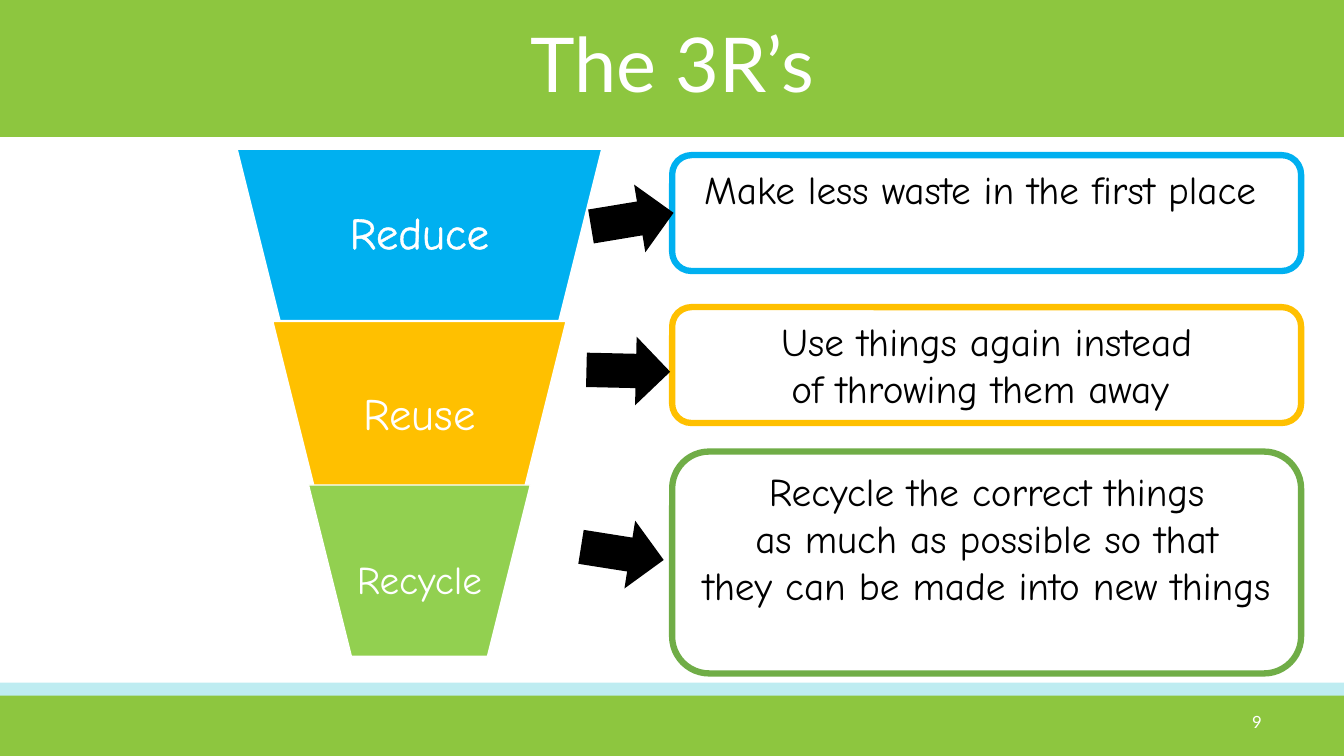
from dataclasses import dataclass

import lxml.etree
import pptx
import pptx.dml.color
import pptx.enum.shapes
import pptx.enum.text
import pptx.oxml
import pptx.util

Cm = pptx.util.Cm
Pt = pptx.util.Pt
SHAPE = pptx.enum.shapes.MSO_SHAPE
ALIGN = pptx.enum.text.PP_ALIGN
ANCHOR = pptx.enum.text.MSO_ANCHOR


@dataclass(frozen=True)
class Theme:
    white: str = "FFFFFF"
    black: str = "000000"
    band: str = "8DC63F"
    stripe: str = "BEECF1"
    blue: str = "00B0F0"
    amber: str = "FFC000"
    lime: str = "92D050"
    green: str = "70AD47"
    heading_font: str = "Lato"
    body_font: str = "Comic Neue"
    title_size: int = 54
    label_size: int = 32
    body_size: int = 28
    number_size: int = 12


THEME = Theme()
HARD_SPACE = chr(160)
SLIDE_WIDTH, SLIDE_HEIGHT = 33.87, 19.05
FUNNEL_CENTRE = 10.57
BOX_LEFT, BOX_WIDTH = 16.94, 15.85
ARROW_WIDTH, ARROW_HEIGHT = 2.11, 1.73

STAGES = [
    {
        "label": "Reduce", "size": THEME.label_size, "outlined": True,
        "fill": THEME.blue, "border": THEME.blue,
        "tier": (3.76, 9.19, 4.32), "label_area": (5.97, 4.32),
        "box": (3.91, 2.92), "arrow": (14.88, 4.67, 350.6),
        "text": "Make less waste in the first place ",
    },
    {
        "label": "Reuse", "size": THEME.label_size, "outlined": False,
        "fill": THEME.amber, "border": THEME.amber,
        "tier": (8.1, 7.39, 4.14), "label_area": (3.43, 3.53),
        "box": (7.74, 2.92), "arrow": (14.78, 8.48, 1.3),
        "text": f"Use things again instead of{HARD_SPACE}throwing them away{HARD_SPACE}",
    },
    {
        "label": "Recycle", "size": THEME.body_size, "outlined": False,
        "fill": THEME.lime, "border": THEME.green,
        "tier": (12.22, 5.59, 4.32), "label_area": (4.14, 3.76),
        "box": (11.38, 5.59), "arrow": (14.63, 13.08, 9),
        "text": f"Recycle the correct things as{HARD_SPACE}much as{HARD_SPACE}possible "
                f"so that they{HARD_SPACE}can be made into new things",
    },
]


def colour(value):
    return pptx.dml.color.RGBColor.from_string(value)


def apply(target, values):
    for name, value in values.items():
        setattr(target, name, value)


def add_figure(slide, kind, area, fill=None, border=None, weight=1, rotation=0):
    shape = slide.shapes.add_shape(kind, *map(Cm, area))
    shape.shadow.inherit = False
    shape.rotation = rotation
    if fill:
        shape.fill.solid()
        shape.fill.fore_color.rgb = colour(fill)
    else:
        shape.fill.background()
    if border:
        shape.line.color.rgb = colour(border)
        shape.line.width = Pt(weight)
    else:
        shape.line.fill.background()
    return shape


def write(shape, text, font, size, text_colour, align=ALIGN.CENTER,
          anchor=ANCHOR.MIDDLE, spacing=1.0, margin=None):
    frame = shape.text_frame
    apply(frame, {"word_wrap": True, "vertical_anchor": anchor})
    if margin is not None:
        sides = ("left", "top", "right", "bottom")
        apply(frame, {f"margin_{side}": Cm(margin) for side in sides})
    paragraph = frame.paragraphs[0]
    apply(paragraph, {"alignment": align, "line_spacing": spacing})
    run = paragraph.add_run()
    run.text = text
    apply(run.font, {"name": font, "size": Pt(size)})
    run.font.color.rgb = colour(text_colour)
    return run


def add_text(slide, area, *content, **options):
    shape = slide.shapes.add_textbox(*map(Cm, area))
    return write(shape, *content, **options)


def outline_letters(run, line_colour, weight):
    qualified = pptx.oxml.ns.qn
    line = lxml.etree.Element(qualified("a:ln"), w=str(Pt(weight)))
    fill = lxml.etree.SubElement(line, qualified("a:solidFill"))
    lxml.etree.SubElement(fill, qualified("a:srgbClr"), val=line_colour)
    run.font._element.insert(0, line)


def add_tier(slide, stage):
    top, width, height = stage["tier"]
    area = (FUNNEL_CENTRE - width / 2, top, width, height)
    add_figure(slide, SHAPE.TRAPEZOID, area, stage["fill"], THEME.white, rotation=180)
    label_width, label_height = stage["label_area"]
    label_area = (FUNNEL_CENTRE - label_width / 2, top + height - label_height,
                  label_width, label_height)
    run = add_text(slide, label_area, stage["label"], THEME.body_font, stage["size"],
                   THEME.white, spacing=0.9, margin=0.1)
    if stage["outlined"]:
        outline_letters(run, THEME.white, 0.75)


def add_explanation(slide, stage):
    top, height = stage["box"]
    box = add_figure(slide, SHAPE.ROUNDED_RECTANGLE, (BOX_LEFT, top, BOX_WIDTH, height),
                     border=stage["border"], weight=4.5)
    write(box, stage["text"], THEME.body_font, THEME.body_size, THEME.black,
          anchor=ANCHOR.TOP)
    left, arrow_top, rotation = stage["arrow"]
    add_figure(slide, SHAPE.RIGHT_ARROW, (left, arrow_top, ARROW_WIDTH, ARROW_HEIGHT),
               THEME.black, rotation=rotation)


def add_bands(slide):
    bands = [(17.2, 0.6, THEME.stripe), (0, 3.45, THEME.band), (17.53, 1.6, THEME.band)]
    for top, height, fill in bands:
        add_figure(slide, SHAPE.RECTANGLE, (0, top, SLIDE_WIDTH, height), fill)


def main():
    presentation = pptx.Presentation()
    apply(presentation, {"slide_width": Cm(SLIDE_WIDTH), "slide_height": Cm(SLIDE_HEIGHT)})
    slide = presentation.slides.add_slide(presentation.slide_layouts[6])
    add_bands(slide)
    add_text(slide, (0, 0, SLIDE_WIDTH, 3.45), "The 3R’s", THEME.heading_font,
             THEME.title_size, THEME.white, spacing=0.9)
    add_text(slide, (24.43, 17.68, 7.62, 1.02), "9", THEME.heading_font,
             THEME.number_size, THEME.white, align=ALIGN.RIGHT)
    for stage in STAGES:
        add_tier(slide, stage)
    for stage in STAGES:
        add_explanation(slide, stage)
    presentation.save("out.pptx")


if __name__ == "__main__":
    main()
